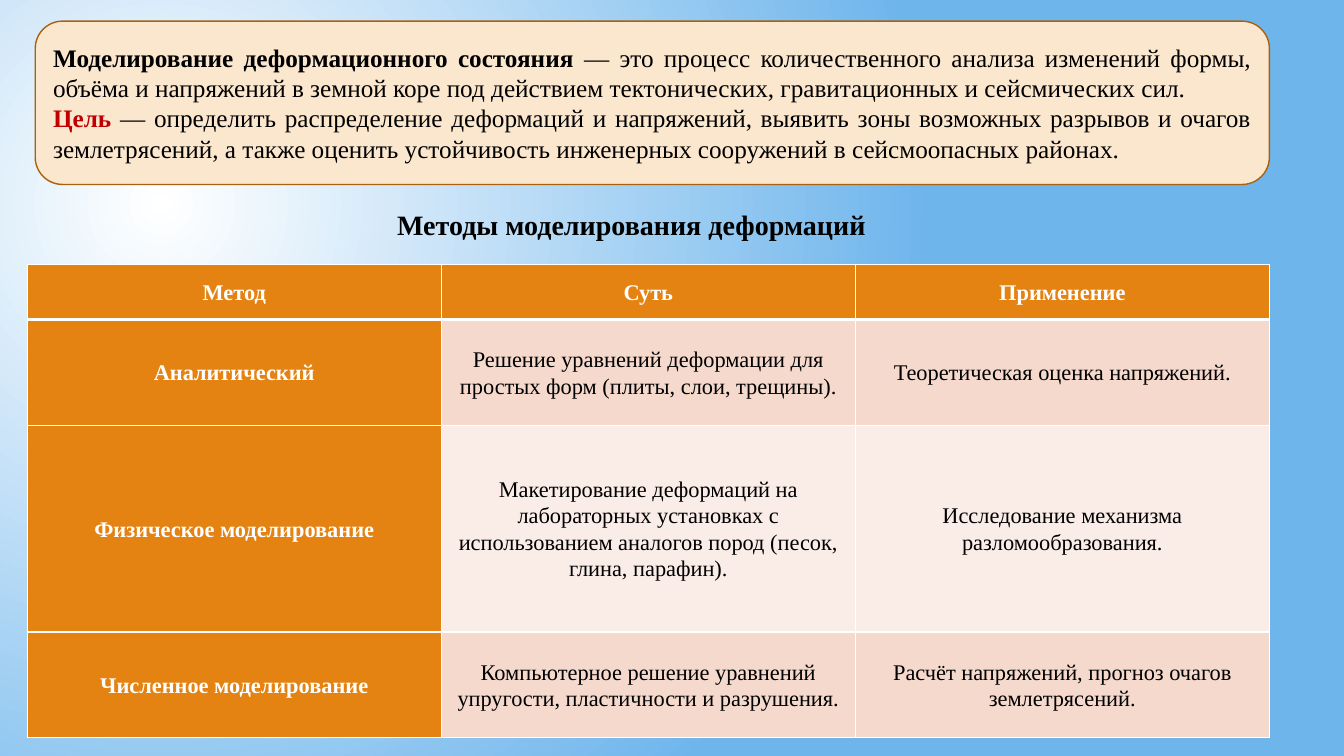
"""Builds a slide on modelling deformation of the Earth's crust."""
from pptx import Presentation
from pptx.dml.color import RGBColor
from pptx.enum.shapes import MSO_SHAPE
from pptx.enum.text import MSO_ANCHOR, MSO_AUTO_SIZE, PP_ALIGN
from pptx.oxml import parse_xml
from pptx.oxml.ns import nsdecls, qn
from pptx.util import Inches, Pt

DEFINITION = [
    ("Моделирование деформационного состояния ",
     "— это процесс количественного анализа изменений формы, объёма и напряжений "
     "в земной коре под действием тектонических, гравитационных и сейсмических сил."),
    ("Цель ",
     "— определить распределение деформаций и напряжений, выявить зоны возможных "
     "разрывов и очагов землетрясений, а также оценить устойчивость инженерных "
     "сооружений в сейсмоопасных районах."),
]
HEADING = "Методы моделирования деформаций"
METHODS = [
    ("Метод", "Суть", "Применение"),
    ("Аналитический",
     "Решение уравнений деформации для простых форм (плиты, слои, трещины).",
     "Теоретическая оценка напряжений."),
    ("Физическое моделирование",
     "Макетирование деформаций на лабораторных установках с использованием "
     "аналогов пород (песок, глина, парафин).",
     "Исследование механизма разломообразования."),
    ("Численное моделирование",
     "Компьютерное решение уравнений упругости, пластичности и разрушения.",
     "Расчёт напряжений, прогноз очагов землетрясений."),
]
ROW_HEIGHTS = (0.55, 1.05, 2.05, 1.05)
COLUMN_WIDTH = 4.107

FONT = "Times New Roman"
WHITE = RGBColor(0xFF, 0xFF, 0xFF)
BLACK = RGBColor(0x00, 0x00, 0x00)
RED = RGBColor(0xC0, 0x00, 0x00)
SKY = RGBColor(0x6E, 0xB5, 0xEC)
CREAM = RGBColor(0xFB, 0xE6, 0xCE)
BROWN = RGBColor(0xA9, 0x61, 0x0D)
ORANGE = RGBColor(0xE4, 0x83, 0x12)
BANDS = (RGBColor(0xFA, 0xED, 0xE7), RGBColor(0xF5, 0xD9, 0xCC))
CENTER, JUSTIFY = PP_ALIGN.CENTER, PP_ALIGN.JUSTIFY
MIDDLE = MSO_ANCHOR.MIDDLE


def add_run(paragraph, text, size, color, bold):
    run = paragraph.add_run()
    run.text = text
    run.font.name = FONT
    run.font.size = Pt(size)
    run.font.color.rgb = color
    run.font.bold = bold


def set_background(slide):
    fill = slide.background.fill
    fill.gradient()
    for stop, color in zip(fill.gradient_stops, (WHITE, SKY)):
        stop.color.rgb = color
    gradient = slide.element.find(".//" + qn("a:gradFill"))
    gradient.remove(gradient.find(qn("a:lin")))
    gradient.find(qn("a:gsLst")).addnext(parse_xml(
        f'<a:path {nsdecls("a")} path="circle">'
        '<a:fillToRect l="50000" t="55000" r="125000" b="100000"/></a:path>'))


def add_definition(slide):
    box = slide.shapes.add_shape(MSO_SHAPE.ROUNDED_RECTANGLE, Inches(0.35),
                                 Inches(0.21), Inches(12.24), Inches(1.62))
    box.shadow.inherit = False
    box.fill.solid()
    box.fill.fore_color.rgb = CREAM
    box.line.color.rgb = BROWN
    box.line.width = Pt(1)
    frame = box.text_frame
    frame.word_wrap = True
    frame.vertical_anchor = MIDDLE
    frame.add_paragraph()
    for paragraph, (term, meaning), color in zip(frame.paragraphs, DEFINITION, (BLACK, RED)):
        paragraph.alignment = JUSTIFY
        add_run(paragraph, term, 18, color, True)
        add_run(paragraph, meaning, 18, BLACK, False)


def add_heading(slide):
    box = slide.shapes.add_textbox(Inches(3.84), Inches(2.01), Inches(4.89), Inches(0.44))
    frame = box.text_frame
    frame.word_wrap = False
    frame.auto_size = MSO_AUTO_SIZE.SHAPE_TO_FIT_TEXT
    add_run(frame.paragraphs[0], HEADING, 20, BLACK, True)


def set_borders(cell, widths):
    properties = cell._tc.get_or_add_tcPr()
    for index, (side, width) in enumerate(widths.items()):
        properties.insert(index, parse_xml(
            f'<a:{side} {nsdecls("a")} w="{Pt(width)}"><a:solidFill>'
            f'<a:srgbClr val="{WHITE}"/></a:solidFill></a:{side}>'))


def fill_cell(cell, text, row, column):
    label = row == 0 or column == 0
    cell.fill.solid()
    cell.fill.fore_color.rgb = ORANGE if label else BANDS[row % 2]
    cell.vertical_anchor = MIDDLE
    cell.margin_left = cell.margin_right = Inches(0.01)
    cell.margin_top = cell.margin_bottom = Inches(0.01)
    paragraph = cell.text_frame.paragraphs[0]
    paragraph.alignment = CENTER
    paragraph.line_spacing = 1.07
    paragraph.space_after = Pt(8)
    add_run(paragraph, text, 16, WHITE if label else BLACK, label)
    set_borders(cell, {"lnL": 1, "lnR": 1, "lnT": 3 if row == 1 else 1,
                       "lnB": 3 if row == 0 else 1})


def add_methods(slide):
    columns = len(METHODS[0])
    table = slide.shapes.add_table(
        len(METHODS), columns, Inches(0.27), Inches(2.62),
        Inches(COLUMN_WIDTH * columns), Inches(sum(ROW_HEIGHTS))).table
    for column in table.columns:
        column.width = Inches(COLUMN_WIDTH)
    for row, (height, texts) in enumerate(zip(ROW_HEIGHTS, METHODS)):
        table.rows[row].height = Inches(height)
        for column, text in enumerate(texts):
            fill_cell(table.cell(row, column), text, row, column)


def main():
    presentation = Presentation()
    presentation.slide_width = Inches(13.33)
    presentation.slide_height = Inches(7.5)
    slide = presentation.slides.add_slide(presentation.slide_layouts[6])
    set_background(slide)
    add_definition(slide)
    add_methods(slide)
    add_heading(slide)
    presentation.save("out.pptx")


if __name__ == "__main__":
    main()
